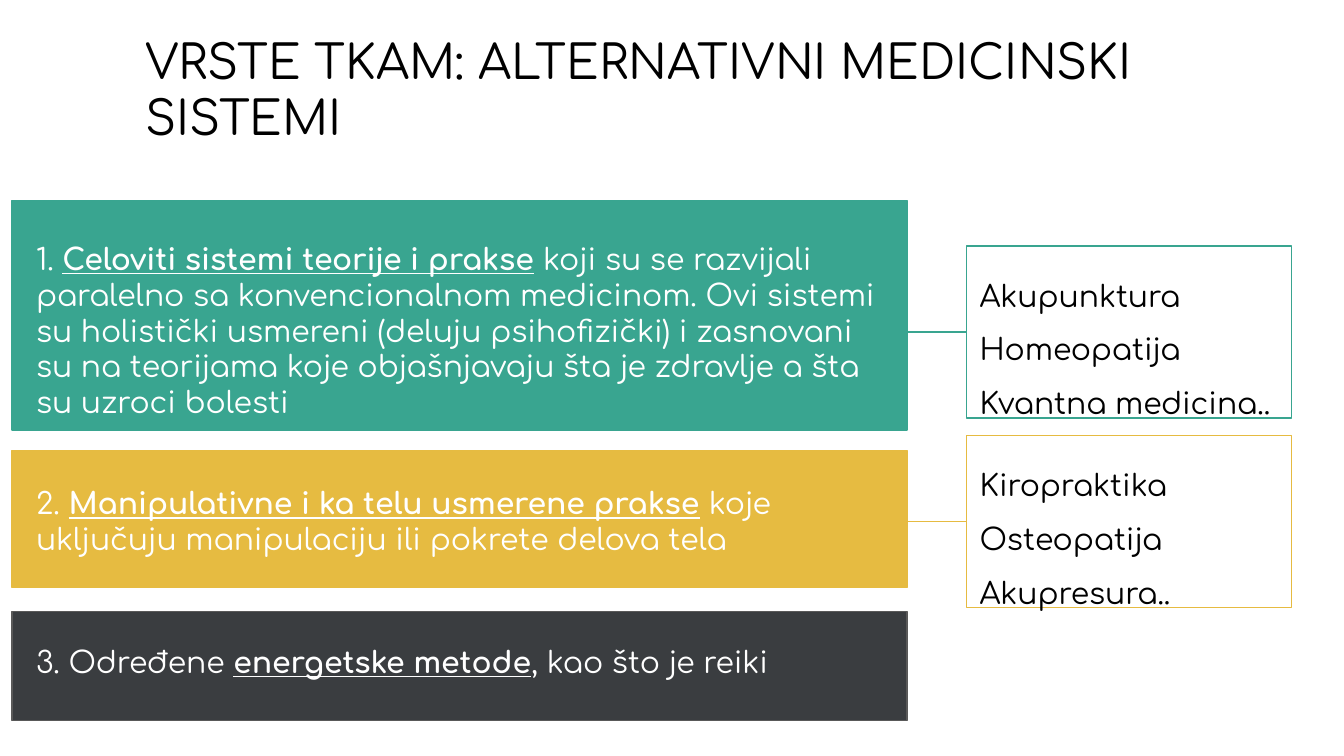
from lxml import etree
from pptx import Presentation
from pptx.dml.color import RGBColor
from pptx.enum.shapes import MSO_CONNECTOR, MSO_SHAPE
from pptx.enum.text import MSO_ANCHOR, MSO_AUTO_SIZE, PP_ALIGN
from pptx.oxml.ns import qn
from pptx.util import Inches, Pt

RECTANGLE = MSO_SHAPE.RECTANGLE
STRAIGHT = MSO_CONNECTOR.STRAIGHT
TOP = MSO_ANCHOR.TOP
LEFT = PP_ALIGN.LEFT
NO_AUTOFIT = MSO_AUTO_SIZE.NONE

FONT = "Comfortaa"
BLACK, WHITE = "000000", "FFFFFF"
TEAL, GOLD, CHARCOAL, GRAY = "39A590", "E6BB41", "3A3D40", "595959"

# Columns in inches: (left, width)
PANEL = (0.09, 6.66)
CAPTION = (0.17, 6.57)
EXAMPLES = (7.19, 2.42)
EXAMPLES_HEIGHT = 1.28

# Rows in inches: (top, height) of the panel and of its caption
ROWS = [
    {
        "panel": (1.49, 1.71), "caption": (1.69, 1.55), "fill": TEAL, "line": TEAL,
        "runs": [
            "1. ", "Celoviti sistemi teorije i prakse",
            " koji su se razvijali paralelno sa konvencionalnom medicinom. "
            "Ovi sistemi su holistički usmereni (deluju psihofizički) i zasnovani "
            "su na teorijama koje objašnjavaju šta je zdravlje a šta su uzroci bolesti",
        ],
        "examples": ["Akupunktura", "Homeopatija", "Kvantna medicina.."],
        "examples_top": 1.83,
    },
    {
        "panel": (3.35, 1.02), "caption": (3.51, 0.74), "fill": GOLD, "line": GOLD,
        "runs": [
            "2. ", "Manipulativne i ka telu usmerene prakse",
            " koje uključuju manipulaciju ili pokrete delova tela",
        ],
        "examples": ["Kiropraktika", "Osteopatija", "Akupresura.."],
        "examples_top": 3.24,
    },
    {
        "panel": (4.55, 0.81), "caption": (4.69, 0.47), "fill": CHARCOAL, "line": GRAY,
        "runs": ["3. Određene ", "energetske metode", ", kao što je reiki"],
        "examples": [],
    },
]


def color(value):
    return RGBColor.from_string(value)


def box(column, row):
    """Return left, top, width and height for a column and a row."""
    return [Inches(value) for value in (column[0], row[0], column[1], row[1])]


def write_text(shape, paragraphs, size=16, ink=BLACK, spacing=1.0):
    """Write paragraphs given as lists of runs; every second run is emphasised."""
    frame = shape.text_frame
    frame.word_wrap = True
    frame.auto_size = NO_AUTOFIT
    frame.vertical_anchor = TOP
    frame.margin_left = frame.margin_right = Inches(0.1)
    frame.margin_top = frame.margin_bottom = Inches(0.1)
    for index, runs in enumerate(paragraphs):
        paragraph = frame.add_paragraph() if index else frame.paragraphs[0]
        paragraph.alignment = LEFT
        paragraph.line_spacing = spacing
        for position, text in enumerate(runs):
            run = paragraph.add_run()
            run.text = text
            run.font.name = FONT
            run.font.size = Pt(size)
            run.font.color.rgb = color(ink)
            run.font.bold = run.font.underline = position % 2 == 1


def add_title(slide, text):
    title = slide.shapes.title
    title.left, title.top, title.width, title.height = box((0.98, 8.08), (0.14, 0.63))
    write_text(title, [[text]], size=25.2)


def add_rectangle(slide, column, row, line, fill=None):
    rectangle = slide.shapes.add_shape(RECTANGLE, *box(column, row))
    rectangle.shadow.inherit = False
    if fill:
        rectangle.fill.solid()
        rectangle.fill.fore_color.rgb = color(fill)
    else:
        rectangle.fill.background()
    rectangle.line.color.rgb = color(line)
    rectangle.line.width = Pt(0.75)
    return rectangle


def add_link(slide, middle, line):
    """Join a panel to its examples with a level line."""
    start, end, height = Inches(sum(PANEL)), Inches(EXAMPLES[0]), Inches(middle)
    link = slide.shapes.add_connector(STRAIGHT, start, height, end, height)
    link.line.color.rgb = color(line)
    link.line.width = Pt(0.75)
    etree.SubElement(link.element.spPr, qn("a:effectLst"))


def add_row(slide, row):
    add_rectangle(slide, PANEL, row["panel"], row["line"], row["fill"])
    caption = slide.shapes.add_textbox(*box(CAPTION, row["caption"]))
    write_text(caption, [row["runs"]], ink=WHITE)
    if row["examples"]:
        top = row["examples_top"]
        examples = add_rectangle(slide, EXAMPLES, (top, EXAMPLES_HEIGHT), row["line"])
        write_text(examples, [[name] for name in row["examples"]], spacing=1.5)
        add_link(slide, top + EXAMPLES_HEIGHT / 2, row["line"])


def main():
    presentation = Presentation()
    presentation.slide_width = Inches(10)
    presentation.slide_height = Inches(10 * 9 / 16)
    slide = presentation.slides.add_slide(presentation.slide_layouts[5])
    add_title(slide, "VRSTE TKAM: ALTERNATIVNI MEDICINSKI SISTEMI")
    for row in ROWS:
        add_row(slide, row)
    presentation.save("out.pptx")


if __name__ == "__main__":
    main()
